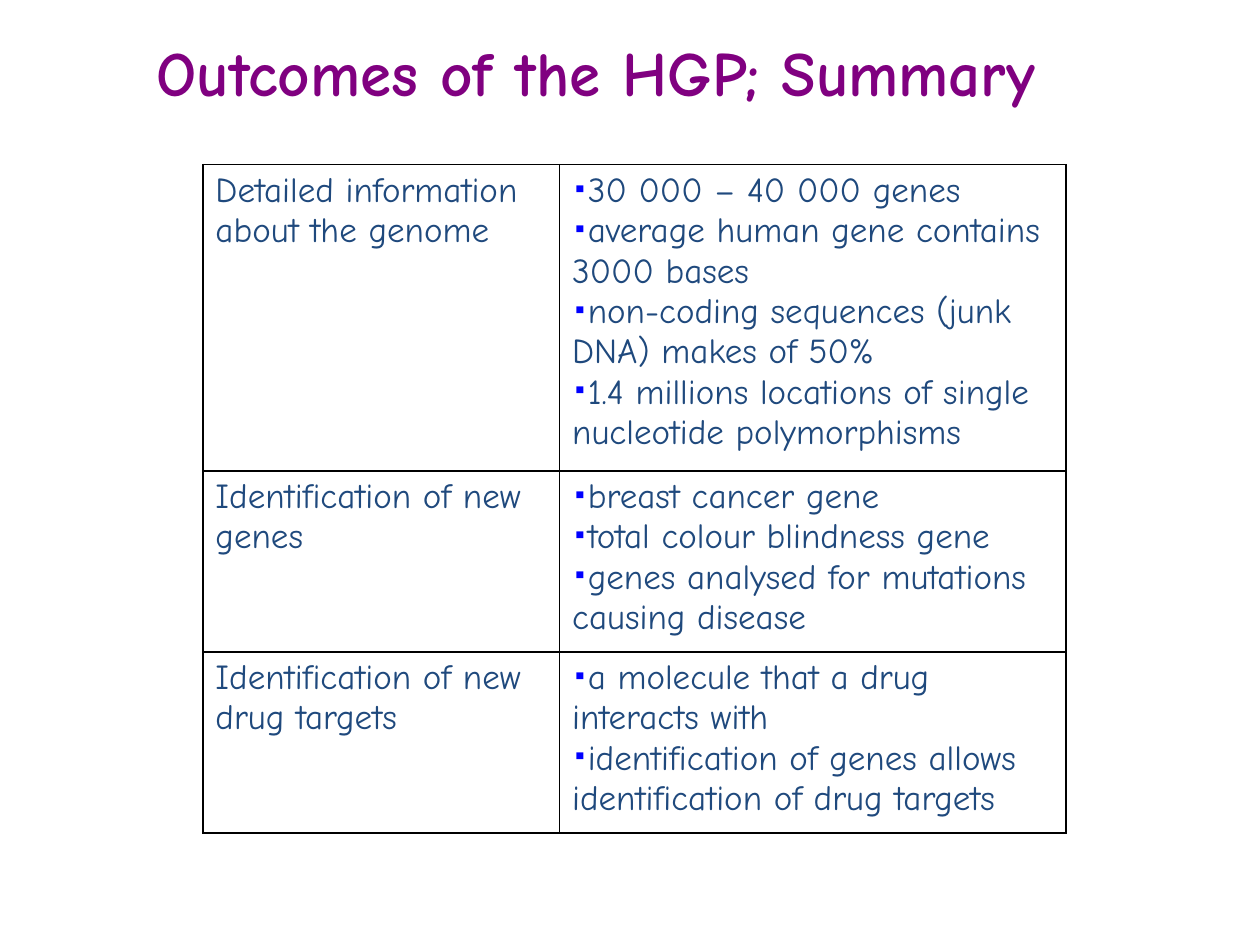
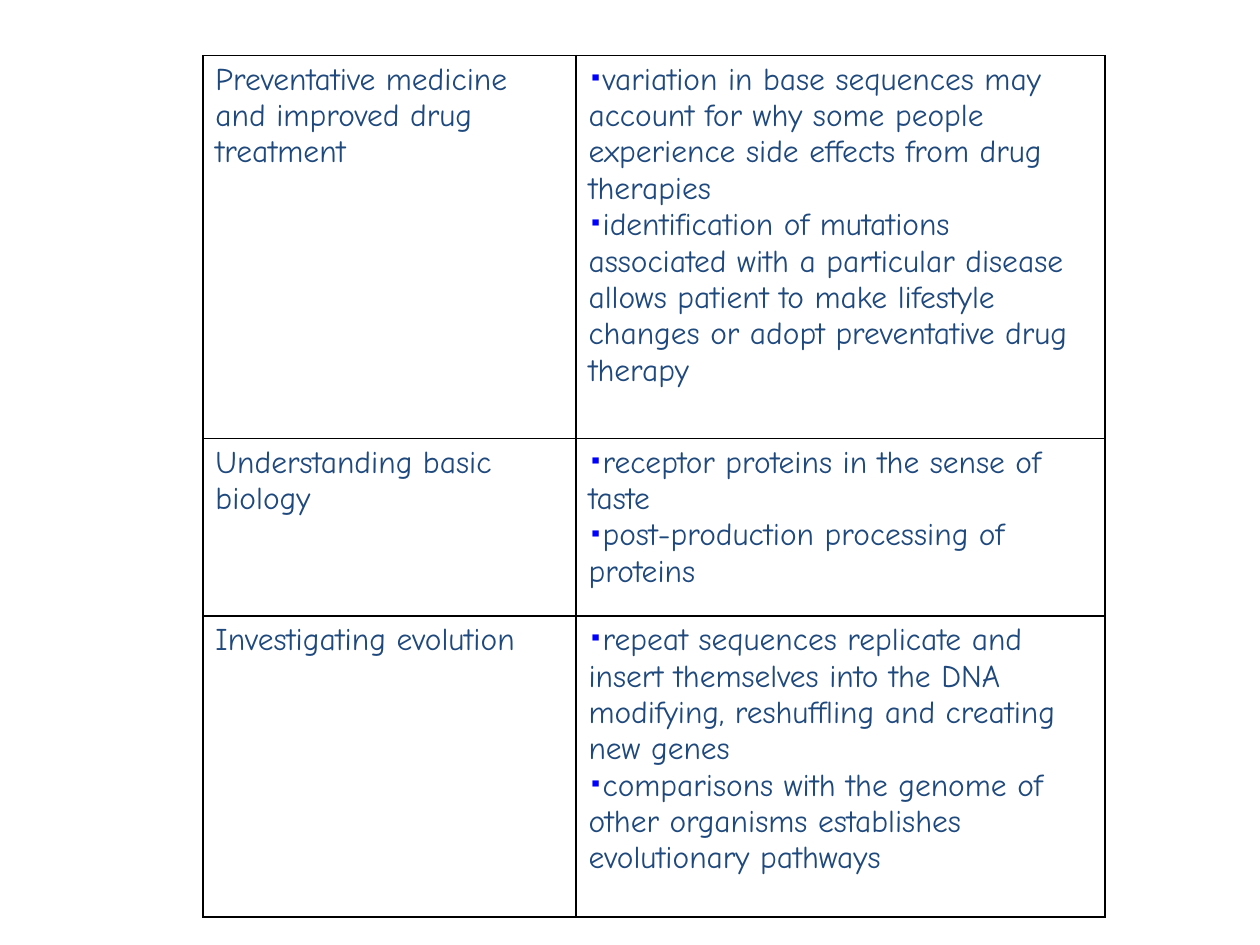
import dataclasses

import lxml.etree
import pptx
import pptx.dml.color
import pptx.oxml.ns
import pptx.presentation
import pptx.slide
import pptx.table
import pptx.text.text
import pptx.util
from pptx.util import Cm

FONT = "Comic Neue"
PURPLE = pptx.dml.color.RGBColor(0x80, 0x00, 0x80)
NAVY = pptx.dml.color.RGBColor(0x1F, 0x49, 0x7D)
BLUE = pptx.dml.color.RGBColor(0x00, 0x00, 0xFF)
BLACK = pptx.dml.color.RGBColor(0x00, 0x00, 0x00)

TABLE_LEFT = Cm(4.09)
BORDER_WIDTH = pptx.util.Pt(1)


@dataclasses.dataclass(frozen=True)
class Outcome:
    heading: str
    details: list[str]
    height: pptx.util.Length


@dataclasses.dataclass(frozen=True)
class OutcomeTable:
    top: pptx.util.Length
    column_widths: tuple[pptx.util.Length, pptx.util.Length]
    text_size: int
    outcomes: list[Outcome]
    title: str = ""


OUTCOME_TABLES = [
    OutcomeTable(
        title="Outcomes of the HGP; Summary",
        top=Cm(3.32),
        column_widths=(Cm(7.19), Cm(10.21)),
        text_size=20,
        outcomes=[
            Outcome(
                "Detailed information about the genome",
                [
                    "30 000 – 40 000 genes",
                    "average human gene contains 3000 bases",
                    "non-coding sequences (junk DNA) makes of 50%",
                    "1.4 millions locations of single nucleotide polymorphisms",
                ],
                Cm(6.17),
            ),
            Outcome(
                "Identification of new genes",
                [
                    "breast cancer gene",
                    "total colour blindness gene",
                    "genes analysed for mutations causing disease",
                ],
                Cm(3.65),
            ),
            Outcome(
                "Identification of new drug targets",
                [
                    "a molecule that a drug interacts with",
                    "identification of genes allows identification of drug targets",
                ],
                Cm(3.65),
            ),
        ],
    ),
    OutcomeTable(
        top=Cm(1.12),
        column_widths=(Cm(7.52), Cm(10.67)),
        text_size=18,
        outcomes=[
            Outcome(
                "Preventative medicine and improved drug treatment",
                [
                    "variation in base sequences may account for why some people "
                    "experience side effects from drug therapies",
                    "identification of mutations associated with a particular disease "
                    "allows patient to make lifestyle changes or adopt preventative "
                    "drug therapy",
                ],
                Cm(7.72),
            ),
            Outcome(
                "Understanding basic biology",
                [
                    "receptor proteins in the sense of taste",
                    "post-production processing of proteins",
                ],
                Cm(3.58),
            ),
            Outcome(
                "Investigating evolution",
                [
                    "repeat sequences replicate and insert themselves into the DNA "
                    "modifying, reshuffling and creating new genes",
                    "comparisons with the genome of other organisms establishes "
                    "evolutionary pathways",
                ],
                Cm(6.07),
            ),
        ],
    ),
]


def add_element(
    parent: lxml.etree.ElementBase, tag: str, **attributes: str
) -> lxml.etree.ElementBase:
    return lxml.etree.SubElement(parent, pptx.oxml.ns.qn(tag), attributes)


def format_text(
    text_frame: pptx.text.text.TextFrame,
    size: int,
    color: pptx.dml.color.RGBColor,
    bold: bool = False,
) -> None:
    for paragraph in text_frame.paragraphs:
        for run in paragraph.runs:
            run.font.name = FONT
            run.font.size = pptx.util.Pt(size)
            run.font.bold = bold
            run.font.color.rgb = color


def add_bullet(paragraph: pptx.text.text._Paragraph) -> None:
    """Put a small blue square right before the text, without a hanging indent."""
    properties = paragraph._p.get_or_add_pPr()
    properties.set("marL", "0")
    properties.set("indent", "0")
    bullet_color = add_element(properties, "a:buClr")
    add_element(bullet_color, "a:srgbClr", val=str(BLUE))
    add_element(properties, "a:buSzPct", val="60000")
    add_element(properties, "a:buChar", char="▪")


def style_cell(cell: pptx.table._Cell) -> None:
    """Outline the cell in black and leave it unfilled."""
    properties = cell._tc.get_or_add_tcPr()
    for side in ("L", "R", "T", "B"):
        border = add_element(properties, f"a:ln{side}", w=str(BORDER_WIDTH))
        border_fill = add_element(border, "a:solidFill")
        add_element(border_fill, "a:srgbClr", val=str(BLACK))
    cell.fill.background()


def add_title(slide: pptx.slide.Slide, title: str) -> None:
    text_box = slide.shapes.add_textbox(Cm(2.9), Cm(0.56), Cm(20.78), Cm(1.8))
    text_frame = text_box.text_frame
    text_frame.word_wrap = True
    text_frame.text = title
    format_text(text_frame, 36, PURPLE, bold=True)


def add_outcome_table(slide: pptx.slide.Slide, content: OutcomeTable) -> None:
    table = slide.shapes.add_table(
        len(content.outcomes),
        len(content.column_widths),
        TABLE_LEFT,
        content.top,
        sum(content.column_widths),
        sum(outcome.height for outcome in content.outcomes),
    ).table
    table.first_row = False
    table.horz_banding = False
    for column, width in zip(table.columns, content.column_widths):
        column.width = width
    for row, outcome in zip(table.rows, content.outcomes):
        row.height = outcome.height
        heading_cell, details_cell = row.cells
        heading_cell.text_frame.text = outcome.heading
        details_cell.text_frame.text = "\n".join(outcome.details)
        for paragraph in details_cell.text_frame.paragraphs:
            add_bullet(paragraph)
        for cell in (heading_cell, details_cell):
            style_cell(cell)
            format_text(cell.text_frame, content.text_size, NAVY)


def add_outcome_slide(
    presentation: pptx.presentation.Presentation, content: OutcomeTable
) -> None:
    slide = presentation.slides.add_slide(presentation.slide_layouts[6])
    add_outcome_table(slide, content)
    if content.title:
        add_title(slide, content.title)


def main() -> None:
    presentation = pptx.Presentation()
    presentation.slide_width = Cm(25.4)
    presentation.slide_height = Cm(19.05)
    for content in OUTCOME_TABLES:
        add_outcome_slide(presentation, content)
    presentation.save("out.pptx")


if __name__ == "__main__":
    main()
